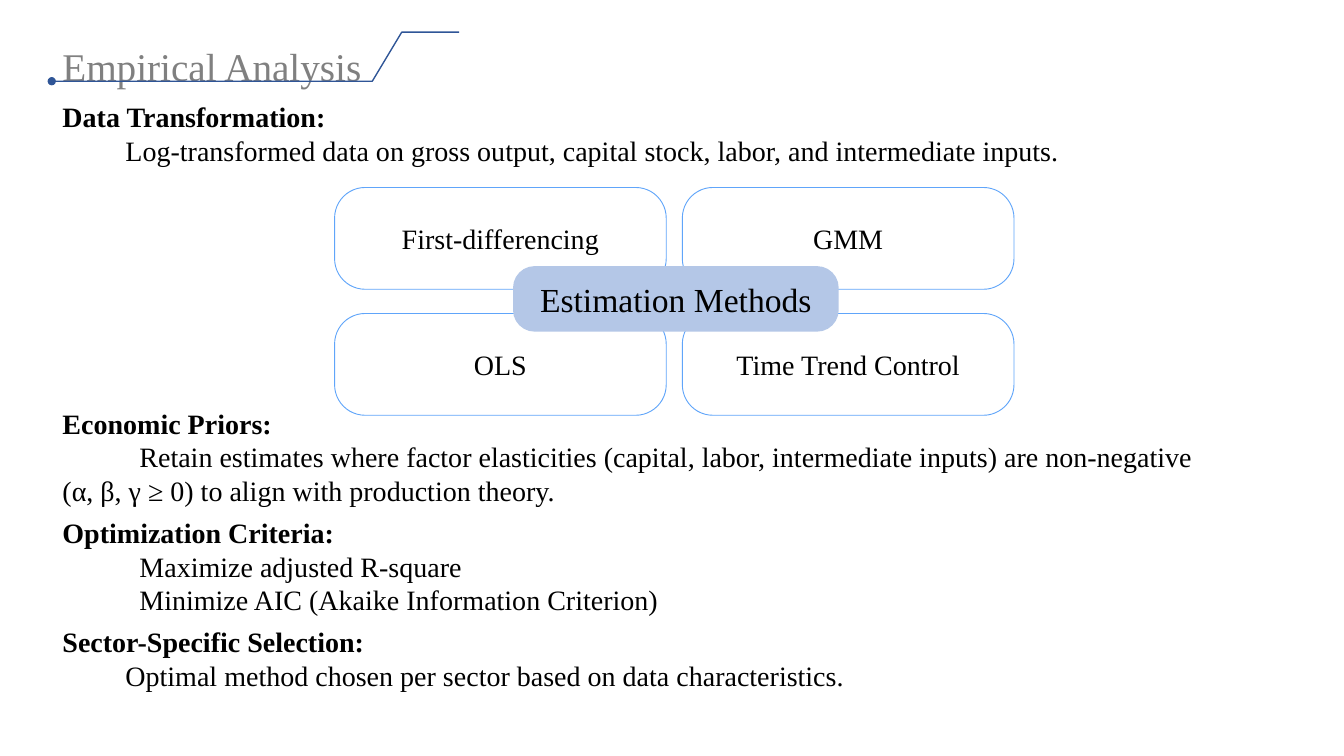
from lxml import etree
from pptx import Presentation
from pptx.dml.color import RGBColor
from pptx.enum.shapes import MSO_SHAPE
from pptx.enum.text import MSO_ANCHOR, MSO_AUTO_SIZE, PP_ALIGN
from pptx.oxml.ns import qn
from pptx.util import Pt

ROUNDED = MSO_SHAPE.ROUNDED_RECTANGLE
TOP, MIDDLE = MSO_ANCHOR.TOP, MSO_ANCHOR.MIDDLE
LEFT, CENTER = PP_ALIGN.LEFT, PP_ALIGN.CENTER
NO_AUTOFIT = MSO_AUTO_SIZE.NONE

FONT = "Times New Roman"
BLACK = RGBColor(0x00, 0x00, 0x00)
WHITE = RGBColor(0xFF, 0xFF, 0xFF)
GREY = RGBColor(0x80, 0x80, 0x80)
NAVY = RGBColor(0x2F, 0x55, 0x97)
SKY = RGBColor(0x60, 0xA5, 0xFA)
PALE_BLUE = RGBColor(0xB4, 0xC7, 0xE7)

# Boxes: left, top, width, height in points
TITLE_BOX = (37.4, 27, 290, 40)
METHODS_BOX = (239, 133.9, 485.3, 162.7)
DATA_BOX = (37.4, 67.7, 916, 60)
CRITERIA_BOX = (37.4, 286.6, 831, 213)

METHODS = [["First-differencing", "GMM"], ["OLS", "Time Trend Control"]]

# Sections: heading, first-line indent of the details, details
DATA_SECTIONS = [
    ("Data Transformation:", 45,
     ["Log-transformed data on gross output, capital stock, labor, and intermediate inputs."]),
]
CRITERIA_SECTIONS = [
    ("Economic Priors:", 55,
     ["Retain estimates where factor elasticities (capital, labor, intermediate inputs) "
      "are non-negative (α, β, γ ≥ 0) to align with production theory."]),
    ("Optimization Criteria:", 55,
     ["Maximize adjusted R-square", "Minimize AIC (Akaike Information Criterion)"]),
    ("Sector-Specific Selection:", 45,
     ["Optimal method chosen per sector based on data characteristics."]),
]


def add_span(para, text, size, color=BLACK, bold=False):
    span = para.add_run()
    span.text = text
    font = span.font
    font.name, font.size, font.bold = FONT, Pt(size), bold
    font.color.rgb = color


def place(holder, box, anchor):
    holder.left, holder.top, holder.width, holder.height = map(Pt, box)
    frame = holder.text_frame
    frame.auto_size = NO_AUTOFIT
    frame.word_wrap = True
    frame.vertical_anchor = anchor
    return frame


def add_title(page, box):
    left, top, width, height = box
    # Stepped line with a dot at its start
    builder = page.shapes.build_freeform(left, top + 31.3, scale=Pt(1))
    builder.add_line_segments(
        [(left + 228.5, top + 31.3), (left + 250, top - 4), (left + 290.6, top - 4)],
        close=False)
    step = builder.convert_to_shape()
    step.shadow.inherit = False
    step.fill.background()
    step.line.color.rgb = NAVY
    step.line.width = Pt(1)
    outline = step.line._get_or_add_ln()
    etree.SubElement(outline, qn("a:headEnd"), type="oval")
    # Title text
    para = place(page.shapes.title, box, MIDDLE).paragraphs[0]
    para.alignment = LEFT
    add_span(para, "Empirical Analysis", 28, GREY)


def add_card(page, box, text, size, fill, corner):
    card = page.shapes.add_shape(ROUNDED, *map(Pt, box))
    card.adjustments[0] = corner
    card.shadow.inherit = False
    card.fill.solid()
    card.fill.fore_color.rgb = fill
    card.line.fill.background()
    card.text_frame.word_wrap = True
    card.text_frame.vertical_anchor = MIDDLE
    para = card.text_frame.paragraphs[0]
    para.alignment = CENTER
    add_span(para, text, size)
    return card


def add_methods(page, box):
    left, top, width, height = box
    card_width, card_height = 236.9, 72.7
    # Two by two grid of methods
    for row, names in enumerate(METHODS):
        for column, name in enumerate(names):
            card_box = (left + column * (width - card_width),
                        top + row * (height - card_height), card_width, card_height)
            card = add_card(page, card_box, name, 20, WHITE, 0.3)
            color = card.fill._xPr.find(qn("a:solidFill"))[0]
            etree.SubElement(color, qn("a:alpha"), val="5000")
            card.line.color.rgb = SKY
            card.line.width = Pt(0.65)
    # Label over the middle
    add_card(page, (left + 127.5, top + 56.2, 232.6, 46.8),
             "Estimation Methods", 24, PALE_BLUE, 0.33)


def add_sections(holder, box, sections):
    frame = place(holder, box, TOP)
    lines = [(text, 0 if text == heading else indent, text == heading)
             for heading, indent, details in sections
             for text in [heading, *details]]
    for number, (text, indent, is_heading) in enumerate(lines):
        para = frame.add_paragraph() if number else frame.paragraphs[0]
        properties = para._p.get_or_add_pPr()
        properties.set("marL", "0")
        properties.set("indent", str(Pt(indent)))
        etree.SubElement(properties, qn("a:buNone"))
        para.alignment = LEFT
        para.line_spacing = Pt(24)
        para.space_before = Pt(6 if is_heading and number else 0)
        add_span(para, text, 20, bold=is_heading)


def main():
    deck = Presentation()
    deck.slide_width, deck.slide_height = Pt(960), Pt(540)
    page = deck.slides.add_slide(deck.slide_layouts.get_by_name("Two Content"))
    add_title(page, TITLE_BOX)
    add_methods(page, METHODS_BOX)
    add_sections(page.placeholders[1], DATA_BOX, DATA_SECTIONS)
    add_sections(page.placeholders[2], CRITERIA_BOX, CRITERIA_SECTIONS)
    deck.save("out.pptx")


if __name__ == "__main__":
    main()
